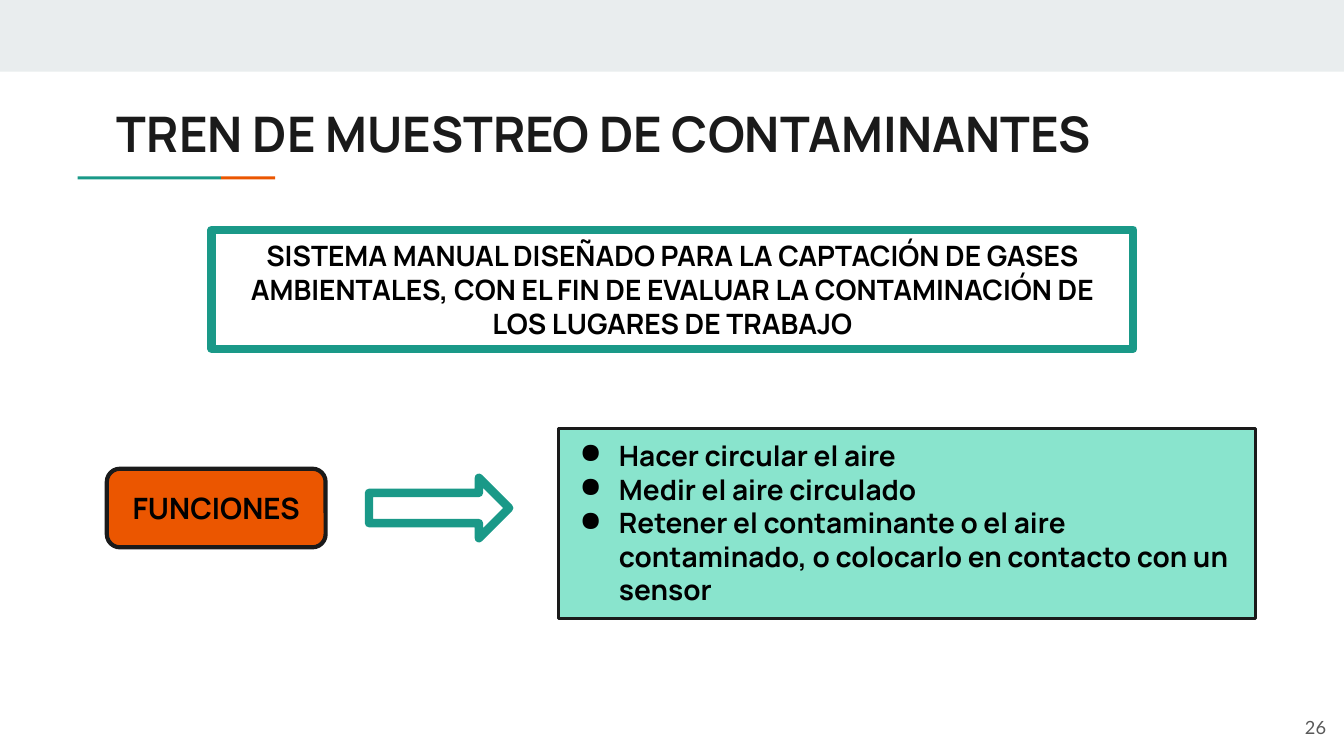
from lxml import etree
from pptx import Presentation
from pptx.dml.color import RGBColor
from pptx.enum.shapes import MSO_SHAPE as Shape
from pptx.enum.text import MSO_ANCHOR as Anchor, PP_ALIGN as Align
from pptx.oxml.ns import qn
from pptx.util import Inches, Pt

COLORS = {
    "band": "E9EDEE",
    "teal": "1A9988",
    "orange": "EB5600",
    "mint": "89E4CD",
    "ink": "1A1A1A",
    "black": "000000",
    "gray": "595959",
}


def color(name):
    return RGBColor.from_string(COLORS[name])


class SlideBuilder:
    def __init__(self, slide, font):
        self.slide = slide
        self.font = font

    def add_run(self, para, text, size, ink="black", font=None, bold=True):
        run = para.add_run()
        run.text = text
        run.font.size = Pt(size)
        run.font.name = font or self.font
        run.font.bold = bold
        run.font.color.rgb = color(ink)

    def set_frame(self, frame, anchor, vertical=0.1):
        frame.word_wrap = True
        frame.vertical_anchor = anchor
        frame.margin_left = frame.margin_right = Inches(0.1)
        frame.margin_top = frame.margin_bottom = Inches(vertical)

    def title(self, text, place, size):
        title = self.slide.shapes.title
        title.left, title.top, title.width, title.height = map(Inches, place)
        self.set_frame(title.text_frame, Anchor.BOTTOM, 0.05)
        para = title.text_frame.paragraphs[0]
        para.alignment = Align.LEFT
        para.line_spacing = 0.9
        self.add_run(para, text, size, "ink")

    def shape(self, kind, place, fill=None, line=None, weight=0):
        shape = self.slide.shapes.add_shape(kind, *map(Inches, place))
        shape.shadow.inherit = False
        if fill:
            shape.fill.solid()
            shape.fill.fore_color.rgb = color(fill)
        else:
            shape.fill.background()
        if line:
            shape.line.color.rgb = color(line)
            shape.line.width = Pt(weight)
        else:
            shape.line.fill.background()
        return shape

    def label(self, shape, text, size):
        self.set_frame(shape.text_frame, Anchor.MIDDLE)
        para = shape.text_frame.paragraphs[0]
        para.alignment = Align.CENTER
        self.add_run(para, text, size)

    def bullets(self, shape, items, size):
        frame = shape.text_frame
        self.set_frame(frame, Anchor.TOP)
        for index, item in enumerate(items):
            para = frame.add_paragraph() if index else frame.paragraphs[0]
            para.alignment = Align.LEFT
            properties = para._p.get_or_add_pPr()
            properties.set("marL", str(Inches(0.5)))
            properties.set("indent", str(Inches(-0.39)))
            bullet_color = etree.SubElement(properties, qn("a:buClr"))
            etree.SubElement(bullet_color, qn("a:srgbClr"), val=COLORS["black"])
            etree.SubElement(properties, qn("a:buChar"), char="●")
            self.add_run(para, item, size)

    def page_number(self, text, place):
        box = self.slide.shapes.add_textbox(*map(Inches, place))
        self.set_frame(box.text_frame, Anchor.MIDDLE, 0.05)
        para = box.text_frame.paragraphs[0]
        para.alignment = Align.RIGHT
        self.add_run(para, text, 13, "gray", "Lato", bold=False)


def main():
    deck = Presentation()
    deck.slide_width, deck.slide_height = Inches(13.33), Inches(7.5)
    page = SlideBuilder(deck.slides.add_slide(deck.slide_layouts[5]), "Manrope")

    page.shape(Shape.RECTANGLE, (0, 0, 13.33, 0.71), "band")
    page.shape(Shape.RECTANGLE, (2.19, 1.75, 0.54, 0.03), "orange")
    page.shape(Shape.RECTANGLE, (0.77, 1.75, 1.42, 0.03), "teal")
    page.title("TREN DE MUESTREO DE CONTAMINANTES", (1.06, 0.89, 11.21, 0.78), 35)
    page.page_number("26", (12.45, 6.93, 0.8, 0.57))

    definition = page.shape(Shape.RECTANGLE, (2.1, 2.28, 9.14, 1.18), line="teal", weight=6)
    page.label(
        definition,
        "SISTEMA MANUAL DISEÑADO PARA LA CAPTACIÓN DE GASES AMBIENTALES, "
        "CON EL FIN DE EVALUAR LA CONTAMINACIÓN DE LOS LUGARES DE TRABAJO",
        20,
    )

    functions = page.shape(
        Shape.ROUNDED_RECTANGLE, (1.06, 4.65, 2.17, 0.78), "orange", "ink", 3
    )
    page.label(functions, "FUNCIONES", 21)
    page.shape(Shape.RIGHT_ARROW, (3.66, 4.74, 1.39, 0.6), line="teal", weight=6)
    function_list = page.shape(
        Shape.RECTANGLE, (5.54, 4.25, 6.91, 1.89), "mint", "ink", 2.25
    )
    page.bullets(
        function_list,
        [
            "Hacer circular el aire",
            "Medir el aire circulado",
            "Retener el contaminante o el aire contaminado, "
            "o colocarlo en contacto con un sensor",
        ],
        20,
    )
    deck.save("out.pptx")


if __name__ == "__main__":
    main()
